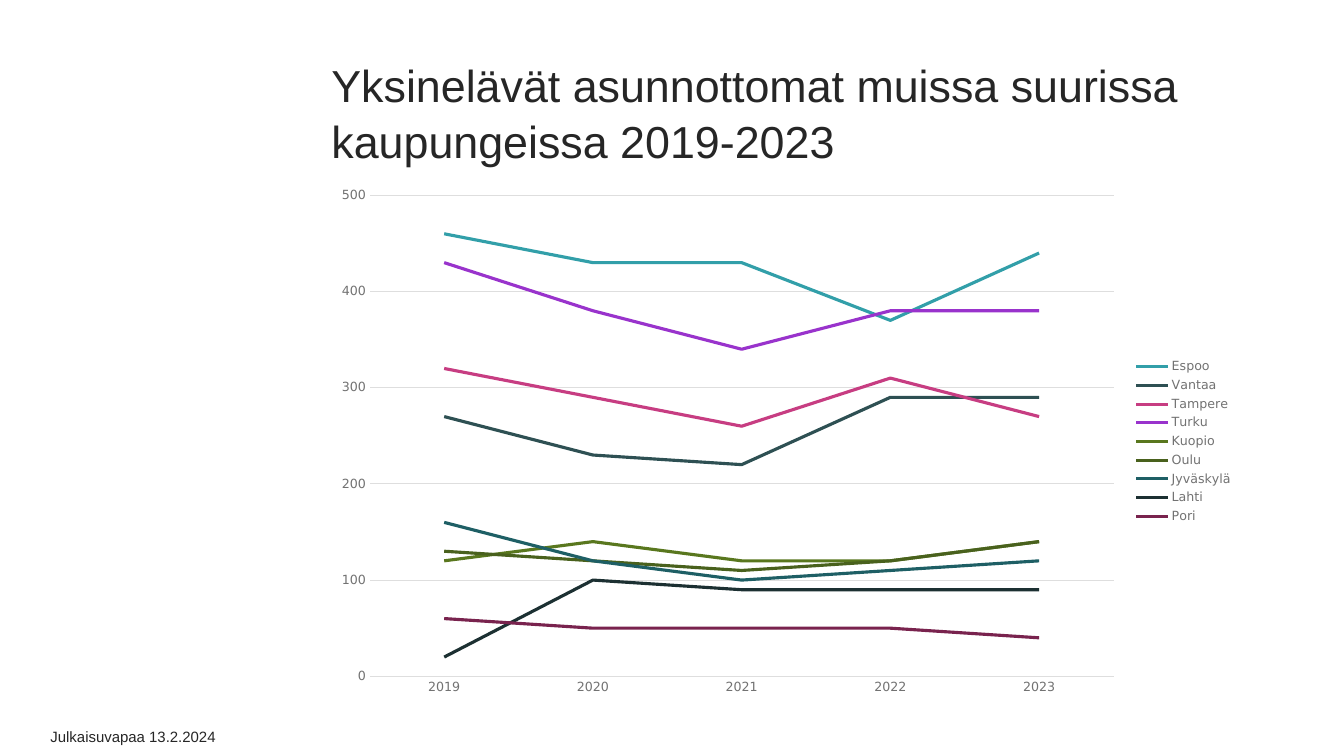
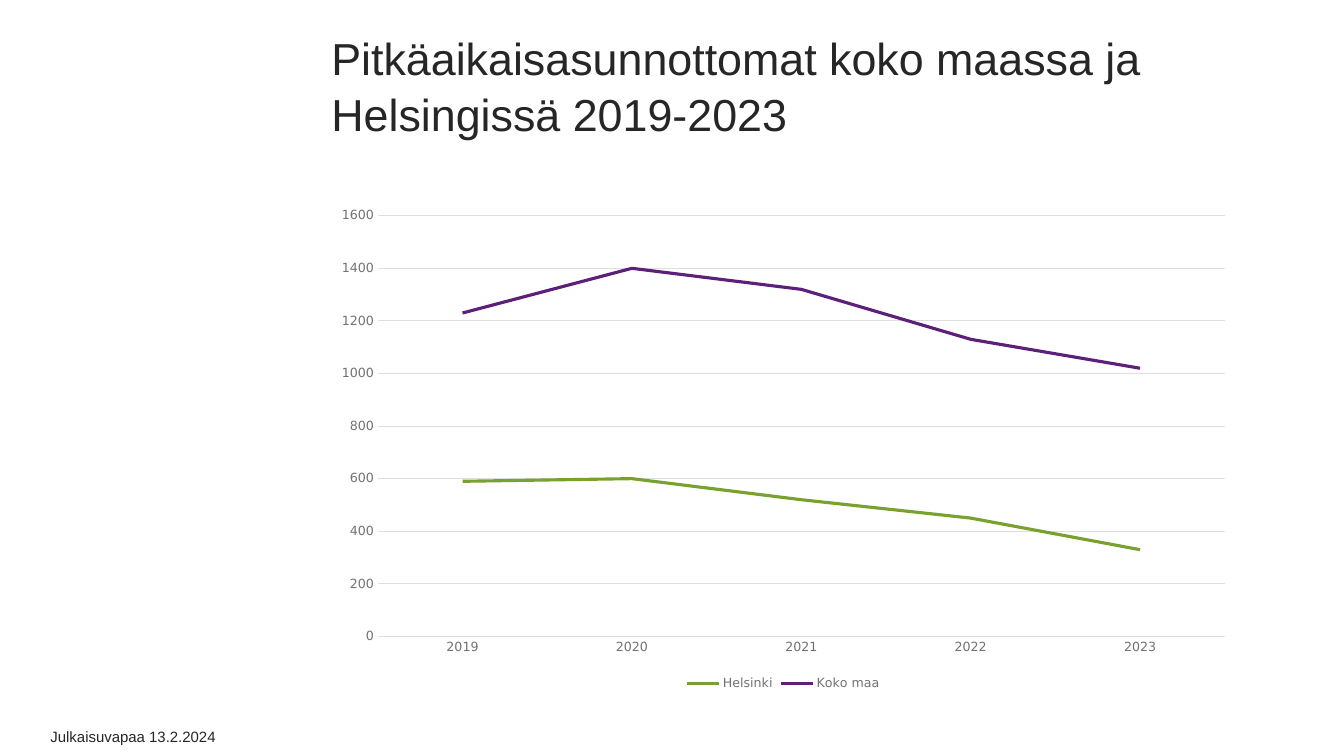
"""Build two line-chart slides on homelessness in Finnish cities, 2019-2023."""
from dataclasses import dataclass

from pptx import Presentation
from pptx import util as u
from pptx.chart import data as chart_data
from pptx.dml.color import RGBColor
from pptx.enum import chart as charts, text


@dataclass(frozen=True)
class Theme:
    ink: str = "262626"
    label: str = "727272"
    grid: str = "DEDEDE"
    title_font: str = "Arial"
    chart_font: str = "DejaVu Sans"
    title_size: float = 32
    chart_size: float = 10
    label_size: float = 9
    footer_size: float = 10.7
    grid_width: float = 0.75
    series_width: float = 2.25


theme = Theme()
PX = 9525
TITLE = {"name": theme.title_font, "size": u.Pt(theme.title_size), "color": theme.ink}
FOOTER = TITLE | {"size": u.Pt(theme.footer_size)}
CHART = {"name": theme.chart_font, "size": u.Pt(theme.chart_size), "color": theme.ink}
LABEL = CHART | {"size": u.Pt(theme.label_size), "color": theme.label}
TITLE_FRAME = {
    "word_wrap": True,
    "auto_size": text.MSO_AUTO_SIZE.NONE,
    "vertical_anchor": text.MSO_ANCHOR.MIDDLE,
}
FOOTER_FRAME = {
    "word_wrap": True,
    "margin_left": 12 * PX,
    "margin_right": 12 * PX,
    "margin_top": 7 * PX,
    "margin_bottom": 7 * PX,
}
YEARS = ["2019", "2020", "2021", "2022", "2023"]
SLIDES = [
    {
        "title": "Yksinelävät asunnottomat muissa suurissa kaupungeissa 2019-2023",
        "title_top": 82,
        "chart_top": 169,
        "chart_height": 503,
        "maximum": 500,
        "step": 100,
        "legend": charts.XL_LEGEND_POSITION.RIGHT,
        "series": [
            ("Espoo", "329FA9", [460, 430, 430, 370, 440]),
            ("Vantaa", "2E5053", [270, 230, 220, 290, 290]),
            ("Tampere", "C73D82", [320, 290, 260, 310, 270]),
            ("Turku", "9933CC", [430, 380, 340, 380, 380]),
            ("Kuopio", "59771E", [120, 140, 120, 120, 140]),
            ("Oulu", "49611D", [130, 120, 110, 120, 140]),
            ("Jyväskylä", "1E5F65", [160, 120, 100, 110, 120]),
            ("Lahti", "1C3032", [20, 100, 90, 90, 90]),
            ("Pori", "79234E", [60, 50, 50, 50, 40]),
        ],
    },
    {
        "title": "Pitkäaikaisasunnottomat koko maassa ja Helsingissä 2019-2023",
        "title_top": 56,
        "chart_top": 189,
        "chart_height": 473,
        "maximum": 1600,
        "step": 200,
        "legend": charts.XL_LEGEND_POSITION.BOTTOM,
        "series": [
            ("Helsinki", "79A130", [590, 600, 520, 450, 330]),
            ("Koko maa", "5C1F7A", [1230, 1400, 1320, 1130, 1020]),
        ],
    },
]


def set_format(target, values):
    for name, value in values.items():
        if name == "color":
            target.color.rgb = RGBColor.from_string(value)
        else:
            setattr(target, name, value)


def place(*lengths):
    return [length * PX for length in lengths]


deck = Presentation()
deck.slide_width, deck.slide_height = place(1280, 720)

for content in SLIDES:
    page = deck.slides.add_slide(deck.slide_layouts.get_by_name("Title Only"))

    title = page.shapes.title
    title.left, title.top, title.width, title.height = place(306, content["title_top"], 877, 48)
    title.text_frame.text = content["title"]
    set_format(title.text_frame, TITLE_FRAME)
    para = title.text_frame.paragraphs[0]
    set_format(para, {"alignment": text.PP_ALIGN.LEFT, "line_spacing": 1.05})
    set_format(para.runs[0].font, TITLE)

    numbers = chart_data.CategoryChartData()
    numbers.categories = YEARS
    for name, color, values in content["series"]:
        numbers.add_series(name, values)
    area = place(308, content["chart_top"], 876, content["chart_height"])
    chart = page.shapes.add_chart(charts.XL_CHART_TYPE.LINE, *area, numbers).chart
    set_format(chart, {"has_title": False, "has_legend": True})
    set_format(chart.font, CHART)
    set_format(chart.legend, {"position": content["legend"], "include_in_layout": False})
    set_format(chart.legend.font, LABEL)

    plot = chart.plots[0]
    plot.vary_by_categories = False
    for series, (name, color, values) in zip(plot.series, content["series"]):
        series.smooth = False
        set_format(series.format.line, {"color": color, "width": u.Pt(theme.series_width)})

    for axis in (chart.category_axis, chart.value_axis):
        set_format(axis, {
            "major_tick_mark": charts.XL_TICK_MARK.NONE,
            "minor_tick_mark": charts.XL_TICK_MARK.NONE,
        })
        set_format(axis.tick_labels.font, LABEL)
    set_format(chart.value_axis, {
        "minimum_scale": 0,
        "maximum_scale": content["maximum"],
        "major_unit": content["step"],
        "has_major_gridlines": True,
    })
    chart.value_axis.format.line.fill.background()
    for ruled in (chart.category_axis, chart.value_axis.major_gridlines):
        set_format(ruled.format.line, {"color": theme.grid, "width": u.Pt(theme.grid_width)})

    footer = page.shapes.add_textbox(*place(36, 686, 224, 32))
    set_format(footer.text_frame, FOOTER_FRAME)
    para = footer.text_frame.paragraphs[0]
    para.space_after = u.Pt(8)
    span = para.add_run()
    span.text = "Julkaisuvapaa 13.2.2024"
    set_format(span.font, FOOTER)

deck.save("out.pptx")
